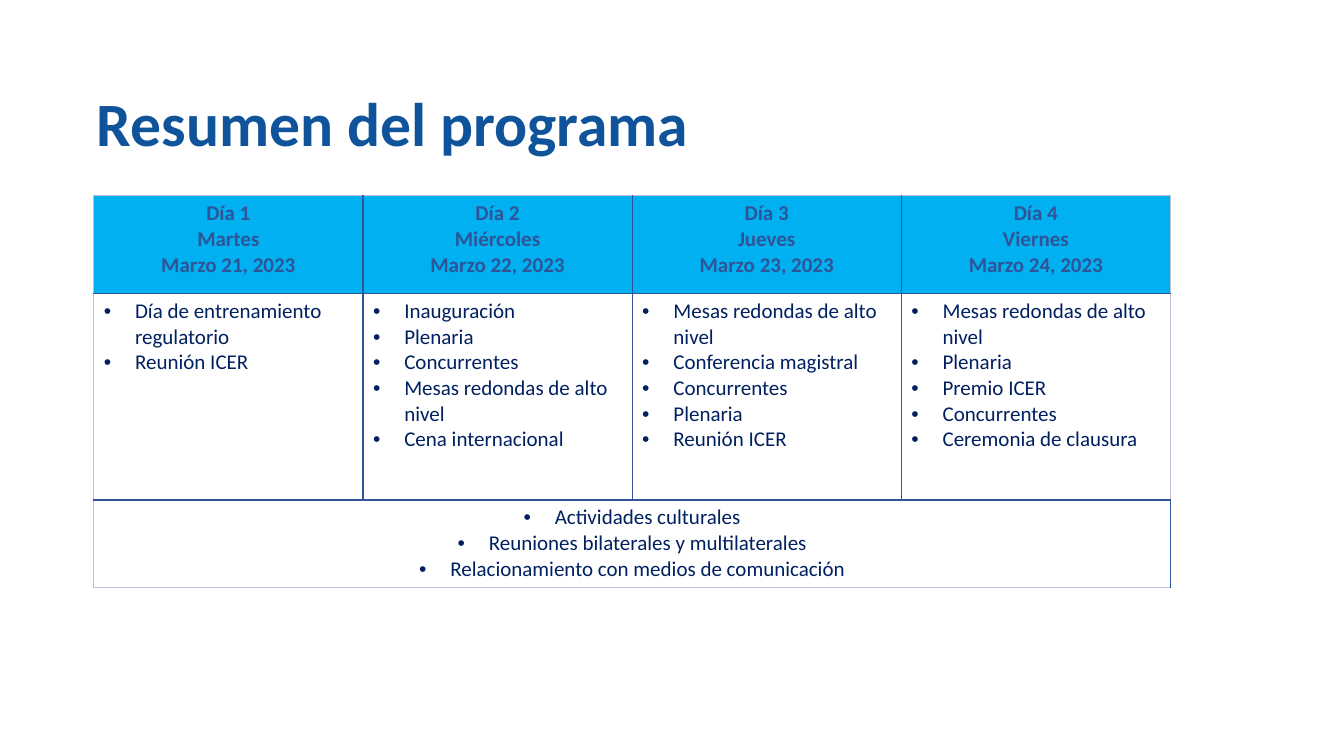
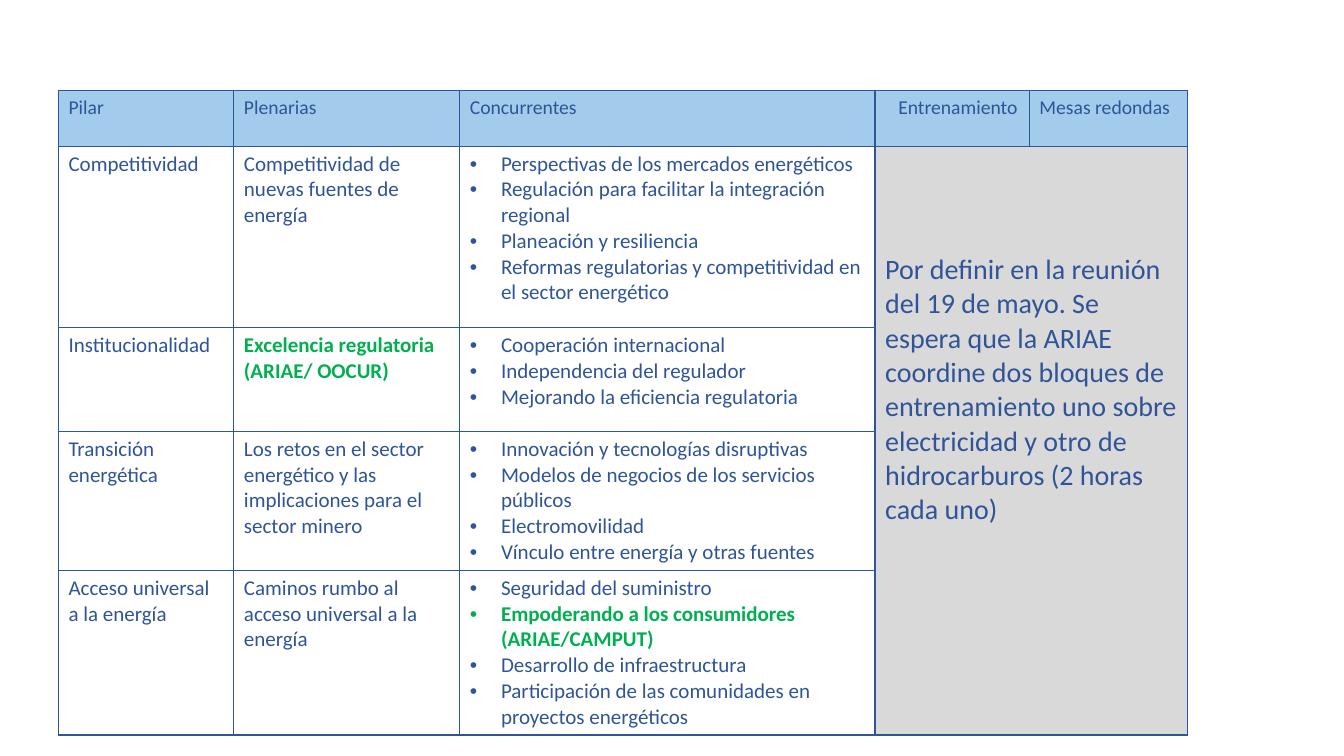
from lxml import etree
from pptx import Presentation
from pptx.dml.color import RGBColor
from pptx.enum import text
from pptx.oxml import ns
from pptx.util import Inches, Pt

BLUE = RGBColor(0x2F, 0x54, 0x98)
NAVY = RGBColor(0x00, 0x20, 0x60)
TITLE_BLUE = RGBColor(0x0F, 0x53, 0x9A)
CYAN = RGBColor(0x00, 0xB0, 0xF0)
SKY = RGBColor(0xA3, 0xCB, 0xEB)
GREEN = RGBColor(0x00, 0xB0, 0x50)
GREY = RGBColor(0xD9, 0xD9, 0xD9)
LILAC = RGBColor(0xBF, 0xBF, 0xD3)
WHITE = RGBColor(0xFF, 0xFF, 0xFF)
FONT = "Calibri"
CENTER = text.PP_ALIGN.CENTER

DAYS = [
    (["Día 1", "Martes", "Marzo 21, 2023"],
     ["Día de entrenamiento regulatorio", "Reunión ICER"]),
    (["Día 2", "Miércoles", "Marzo 22, 2023"],
     ["Inauguración", "Plenaria", "Concurrentes",
      "Mesas redondas de alto nivel", "Cena internacional"]),
    (["Día 3", "Jueves", "Marzo 23, 2023"],
     ["Mesas redondas de alto nivel", "Conferencia magistral",
      "Concurrentes", "Plenaria", "Reunión ICER"]),
    (["Día 4", "Viernes", "Marzo 24, 2023"],
     ["Mesas redondas de alto nivel", "Plenaria", "Premio ICER",
      "Concurrentes", "Ceremonia de clausura"]),
]
EVERY_DAY = ["Actividades culturales", "Reuniones bilaterales y multilaterales",
             "Relacionamiento con medios de comunicación"]

HEADINGS = ["Pilar", "Plenarias", "Concurrentes", "Entrenamiento", "Mesas redondas"]
PILLARS = [
    ("Competitividad", "Competitividad de nuevas fuentes de energía",
     ["Perspectivas de los mercados energéticos",
      "Regulación para facilitar la integración regional",
      "Planeación y resiliencia",
      "Reformas regulatorias y competitividad en el sector energético"]),
    ("Institucionalidad", "Excelencia regulatoria (ARIAE/ OOCUR)",
     ["Cooperación internacional", "Independencia del regulador",
      "Mejorando la eficiencia regulatoria"]),
    ("Transición energética",
     "Los retos en el sector energético y las implicaciones para el sector minero",
     ["Innovación y tecnologías disruptivas",
      "Modelos de negocios de los servicios públicos",
      "Electromovilidad", "Vínculo entre energía y otras fuentes"]),
    ("Acceso universal a la energía", "Caminos rumbo al acceso universal a la energía",
     ["Seguridad del suministro", "Empoderando a los consumidores (ARIAE/CAMPUT)",
      "Desarrollo de infraestructura",
      "Participación de las comunidades en proyectos energéticos"]),
]
HIGHLIGHTS = {"Excelencia regulatoria (ARIAE/ OOCUR)",
              "Empoderando a los consumidores (ARIAE/CAMPUT)"}
PENDING = ("Por definir en la reunión del 19 de mayo. Se espera que la ARIAE coordine "
           "dos bloques de entrenamiento uno sobre electricidad y otro de "
           "hidrocarburos (2 horas cada uno)")


def set_font(r, size, color, bold=False):
    for name, value in {"name": FONT, "size": Pt(size), "bold": bold}.items():
        setattr(r.font, name, value)
    r.font.color.rgb = color


def add_bullet(p):
    pPr = p._p.get_or_add_pPr()
    pPr.set("marL", str(Inches(0.31)))
    pPr.set("indent", str(-Inches(0.31)))
    etree.SubElement(pPr, ns.qn("a:buFont")).set("typeface", "Arial")
    etree.SubElement(pPr, ns.qn("a:buChar")).set("char", "•")


def fill_cell(cell, lines, color, size=15, bold=False, bullets=False, align=None):
    tf = cell.text_frame
    for i, line in enumerate(lines):
        p = tf.add_paragraph() if i else tf.paragraphs[0]
        if bullets:
            add_bullet(p)
        p.alignment = align
        r = p.add_run()
        r.text = line
        marked = line in HIGHLIGHTS
        set_font(r, size, GREEN if marked else color, bold or marked)


def set_border(cell, side, color):
    ln = etree.SubElement(cell._tc.get_or_add_tcPr(), ns.qn("a:ln" + side))
    ln.set("w", str(Pt(1)))
    fill = etree.SubElement(ln, ns.qn("a:solidFill"))
    etree.SubElement(fill, ns.qn("a:srgbClr")).set("val", str(color))


def add_grid(s, left, top, widths, heights, header_fill, edge):
    frame = s.shapes.add_table(len(heights), len(widths), Inches(left), Inches(top),
                               Inches(sum(widths)), Inches(sum(heights)))
    table = frame.table
    table.first_row = table.horz_banding = False
    for column, width in zip(table.columns, widths):
        column.width = Inches(width)
    for row, height in zip(table.rows, heights):
        row.height = Inches(height)
    last_row, last_column = len(heights) - 1, len(widths) - 1
    for i, row in enumerate(table.rows):
        for j, cell in enumerate(row.cells):
            outer = {"L": j == 0, "R": j == last_column, "T": i == 0, "B": i == last_row}
            for side, is_outer in outer.items():
                set_border(cell, side, edge if is_outer else BLUE)
            cell.fill.solid()
            cell.fill.fore_color.rgb = WHITE if i else header_fill
    return table


def add_title(s, caption):
    title = s.shapes.title
    box = {"left": 0.86, "top": 0.67, "width": 10.54, "height": 1.17}
    for name, value in box.items():
        setattr(title, name, Inches(value))
    tf = title.text_frame
    tf.word_wrap = True
    tf.vertical_anchor = text.MSO_ANCHOR.MIDDLE
    p = tf.paragraphs[0]
    p.alignment = text.PP_ALIGN.LEFT
    p.line_spacing = 0.9
    r = p.add_run()
    r.text = caption
    set_font(r, 44, TITLE_BLUE, True)


def add_schedule(s, left, top):
    table = add_grid(s, left, top, [2.67] * 4, [0.97, 2.05, 0.87], CYAN, LILAC)
    for j, (date, events) in enumerate(DAYS):
        fill_cell(table.cell(0, j), date, BLUE, bold=True, align=CENTER)
        fill_cell(table.cell(1, j), events, NAVY, bullets=True)
    table.cell(2, 0).merge(table.cell(2, 3))
    fill_cell(table.cell(2, 0), EVERY_DAY, NAVY, bullets=True, align=CENTER)


def add_pillars(s, left, top):
    table = add_grid(s, left, top, [1.74, 2.24, 4.12, 1.53, 1.57],
                     [0.55, 1.8, 1.03, 1.38, 1.63], SKY, BLUE)
    for j, heading in enumerate(HEADINGS):
        fill_cell(table.cell(0, j), [heading], BLUE, size=14)
    training = table.cell(0, 3)
    training.margin_left = Inches(0.23)
    training.margin_right = Inches(0.05)
    for i, (pillar, plenary, sessions) in enumerate(PILLARS, 1):
        fill_cell(table.cell(i, 0), [pillar], BLUE)
        fill_cell(table.cell(i, 1), [plenary], BLUE)
        fill_cell(table.cell(i, 2), sessions, BLUE, bullets=True)
    pending = table.cell(1, 3)
    pending.merge(table.cell(4, 4))
    pending.fill.fore_color.rgb = GREY
    pending.margin_top = Inches(1.06)
    fill_cell(pending, [PENDING], BLUE, size=20)


def main():
    prs = Presentation()
    prs.slide_width = Inches(13.33)
    prs.slide_height = Inches(7.5)
    s = prs.slides.add_slide(prs.slide_layouts[5])
    add_title(s, "Resumen del programa")
    add_schedule(s, 0.93, 1.94)
    s = prs.slides.add_slide(prs.slide_layouts[6])
    add_pillars(s, 0.58, 0.9)
    prs.save("out.pptx")


if __name__ == "__main__":
    main()
